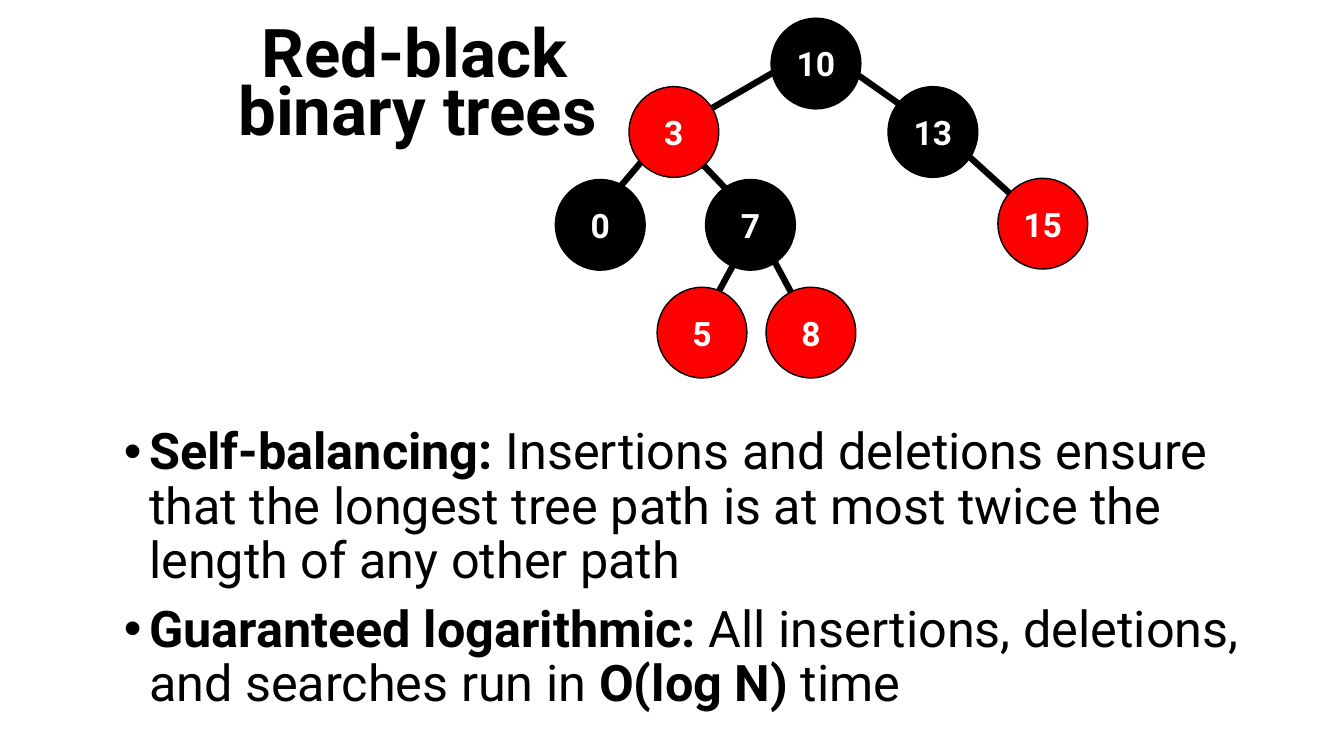
from lxml import etree
from pptx import Presentation
from pptx.dml.color import RGBColor
from pptx.enum.shapes import MSO_CONNECTOR, MSO_SHAPE
from pptx.enum.text import MSO_ANCHOR, PP_ALIGN
from pptx.oxml.ns import qn
from pptx.util import Pt

OVAL, LINE = MSO_SHAPE.OVAL, MSO_CONNECTOR.STRAIGHT
MID, TOP = MSO_ANCHOR.MIDDLE, MSO_ANCHOR.TOP
CENTER = PP_ALIGN.CENTER
FONT = "Roboto"
BLACK, RED, WHITE = "000000", "FF0000", "FFFFFF"

# Content: text, left, top, width, height
TITLES = [
    ("Red-black", 163.4, 7.2, 265.7, 64.8),
    ("binary trees", 141.8, 49, 313.2, 64.8),
]
BODY = (81.4, 301, 833.8, 253.4)

# Each bullet is a list of (text, bold)
BULLETS = [
    [("Self-balancing:", True),
     (" Insertions and deletions ensure that the longest tree path"
      " is at most twice the length of any other path", False)],
    [("Guaranteed logarithmic:", True),
     (" All insertions, deletions, and searches run in ", False),
     ("O(log N)", True),
     (" time", False)],
]

# Tree nodes: key, colour, left, top
NODE_W, NODE_H = 64.1, 64.8
NODES = [
    ("10", BLACK, 550.8, 13),
    ("3", RED, 449.3, 61.9),
    ("13", BLACK, 634.3, 61.9),
    ("0", BLACK, 396.7, 128.2),
    ("7", BLACK, 504, 128.2),
    ("15", RED, 712.8, 127.4),
    ("5", RED, 469.4, 205.2),
    ("8", RED, 547.2, 205.2),
]

# Tree edges: x and y of both ends
EDGES = [
    (488.9, 88.6, 574.6, 38.9),
    (601.2, 45.4, 664.6, 90),
    (683.3, 103.7, 730.1, 146.2),
    (429.1, 149.8, 465.1, 107.3),
    (528.5, 145.4, 487.4, 102.2),
    (503.3, 226.8, 533.5, 171.4),
    (572.4, 222.5, 545, 171.4),
]


def color(code):
    return RGBColor.from_string(code)


def style(run, size, code, bold=True):
    font = run.font
    font.name, font.size, font.bold = FONT, Pt(size), bold
    font.color.rgb = color(code)


def add_box(slide, area, anchor):
    frame = slide.shapes.add_textbox(*map(Pt, area)).text_frame
    frame.word_wrap = True
    frame.vertical_anchor = anchor
    return frame


def add_title(slide, text, *area):
    para = add_box(slide, area, MID).paragraphs[0]
    para.text = text
    para.alignment, para.line_spacing = CENTER, 0.9
    style(para.runs[0], 48, BLACK)


def add_edge(slide, *ends):
    edge = slide.shapes.add_connector(LINE, *map(Pt, ends))
    edge.line.color.rgb = color(BLACK)
    edge.line.width = Pt(4.5)
    etree.SubElement(edge._element.spPr, qn("a:effectLst"))


def add_node(slide, key, fill, left, top):
    node = slide.shapes.add_shape(
        OVAL, Pt(left), Pt(top), Pt(NODE_W), Pt(NODE_H))
    node.shadow.inherit = False
    node.fill.solid()
    node.fill.fore_color.rgb = color(fill)
    node.line.color.rgb = color(BLACK)
    node.line.width = Pt(1)
    frame = node.text_frame
    frame.text = key
    frame.vertical_anchor = MID
    para = frame.paragraphs[0]
    para.alignment = CENTER
    style(para.runs[0], 24, WHITE)


def add_bullets(slide):
    frame = add_box(slide, BODY, TOP)
    for i, parts in enumerate(BULLETS):
        para = frame.add_paragraph() if i else frame.paragraphs[0]
        para.line_spacing, para.space_before = 0.9, Pt(10)
        props = para._p.get_or_add_pPr()
        props.set("marL", str(Pt(18)))
        props.set("indent", str(-Pt(18)))
        etree.SubElement(props, qn("a:buFont"), typeface="Arial")
        etree.SubElement(props, qn("a:buChar"), char="•")
        for text, bold in parts:
            run = para.add_run()
            run.text = text
            style(run, 36, BLACK, bold)


def main():
    deck = Presentation()
    deck.slide_width, deck.slide_height = Pt(960), Pt(540)
    slide = deck.slides.add_slide(deck.slide_layouts[6])

    # Heading and bullets
    for title in TITLES:
        add_title(slide, *title)
    add_bullets(slide)

    # Tree: edges lie behind the nodes
    for edge in EDGES:
        add_edge(slide, *edge)
    for node in NODES:
        add_node(slide, *node)

    deck.save("out.pptx")


if __name__ == "__main__":
    main()
